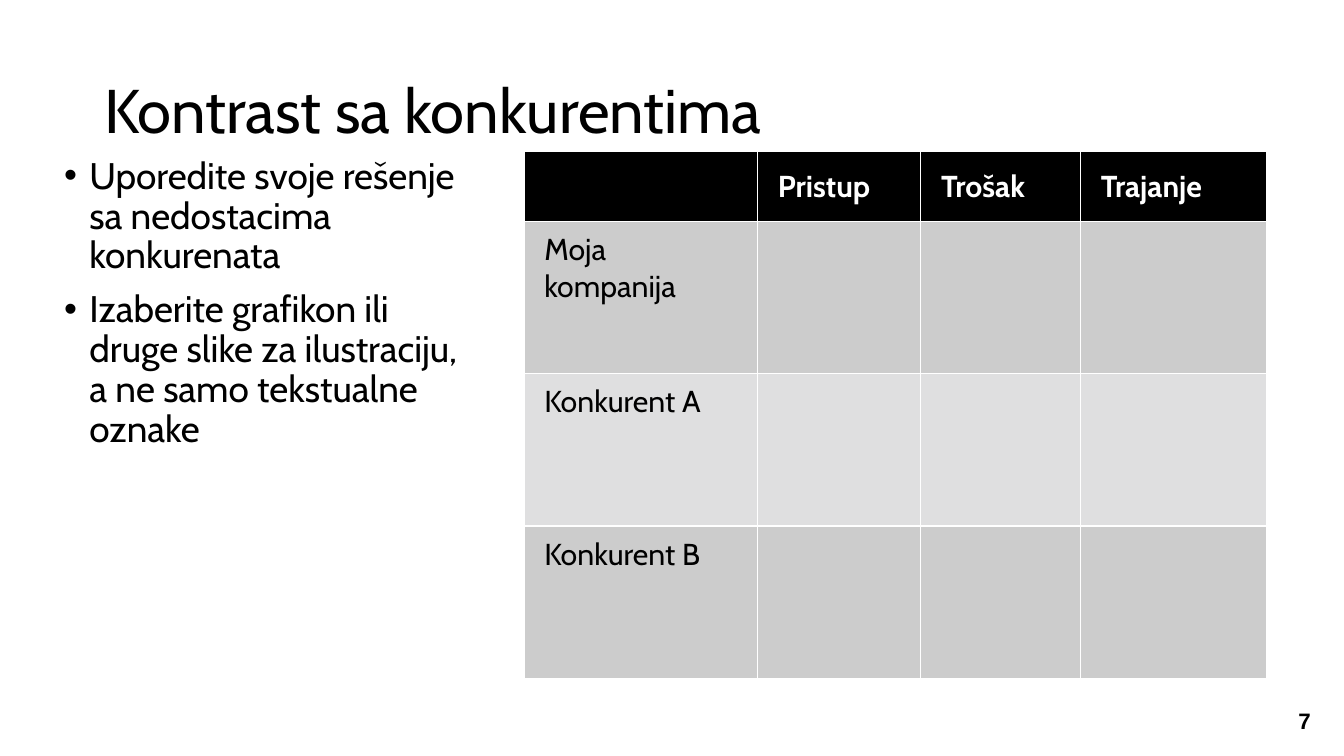
"""Build the slide that contrasts the company with its competitors."""
from lxml import etree
from pptx import Presentation
from pptx import util as u
from pptx.dml.color import RGBColor
from pptx.enum import text
from pptx.oxml import ns

BLACK = RGBColor(0x00, 0x00, 0x00)
WHITE = RGBColor(0xFF, 0xFF, 0xFF)
DARK_BAND = RGBColor(0xCC, 0xCC, 0xCC)
LIGHT_BAND = RGBColor(0xDF, 0xDF, 0xE0)

BULLETS = [
    "Uporedite svoje rešenje sa nedostacima konkurenata",
    "Izaberite grafikon ili druge slike za ilustraciju, a ne samo tekstualne oznake",
]
COMPARISON = [
    ["", "Pristup", "Trošak", "Trajanje"],
    ["Moja kompanija", "", "", ""],
    ["Konkurent A", "", "", ""],
    ["Konkurent B", "", "", ""],
]
COLUMN_WIDTHS = [1.93, 1.35, 1.32, 1.54]
ROW_HEIGHTS = [0.58, 1.26, 1.26, 1.26]


class ContrastSlide:
    """Hold the text style and the current slide."""

    font = "Cabin"

    def __init__(self, deck):
        self.slide = deck.slides.add_slide(deck.slide_layouts[1])

    def style(self, paragraph, size, color=BLACK, bold=False, font=None):
        for run in paragraph.runs:
            run.font.name = font or self.font
            run.font.size = u.Pt(size)
            run.font.bold = bold
            run.font.color.rgb = color

    def place(self, holder, left, top, width, height):
        holder.left, holder.top = u.Inches(left), u.Inches(top)
        holder.width, holder.height = u.Inches(width), u.Inches(height)
        holder.text_frame.auto_size = text.MSO_AUTO_SIZE.NONE
        return holder.text_frame

    def title(self, wording, *box):
        heading = self.place(self.slide.shapes.title, *box)
        heading.text = wording
        heading.vertical_anchor = text.MSO_ANCHOR.MIDDLE
        line = heading.paragraphs[0]
        line.alignment = text.PP_ALIGN.LEFT
        line.line_spacing = 0.9
        self.style(line, 36.7)

    def bullets(self, items, *box):
        advice = self.place(self.slide.placeholders[1], *box)
        advice.text = "\n".join(items)
        for item in advice.paragraphs:
            item.line_spacing = 0.9
            item.space_before = u.Pt(8.3)
            properties = item._p.get_or_add_pPr()
            properties.set("marL", str(u.Inches(0.21)))
            properties.set("indent", str(u.Inches(-0.21)))
            self.style(item, 22)

    def border(self, cell):
        properties = cell._tc.get_or_add_tcPr()
        for position, side in enumerate(("lnL", "lnR", "lnT", "lnB")):
            line = etree.Element(ns.qn(f"a:{side}"), w=str(u.Pt(1)))
            fill = etree.SubElement(line, ns.qn("a:solidFill"))
            etree.SubElement(fill, ns.qn("a:srgbClr"), val=str(WHITE))
            properties.insert(position, line)

    def cell(self, cell, wording, row):
        header = row == 0
        cell.margin_left = cell.margin_right = u.Inches(0.17)
        cell.margin_top = cell.margin_bottom = u.Inches(0.08)
        cell.vertical_anchor = text.MSO_ANCHOR.MIDDLE if header else text.MSO_ANCHOR.TOP
        cell.fill.solid()
        band = DARK_BAND if row % 2 else LIGHT_BAND
        cell.fill.fore_color.rgb = BLACK if header else band
        cell.text_frame.text = wording
        self.style(cell.text_frame.paragraphs[0], 18, WHITE if header else BLACK, header)
        self.border(cell)

    def table(self, rows, left, top):
        size = (sum(COLUMN_WIDTHS), sum(ROW_HEIGHTS))
        comparison = self.slide.shapes.add_table(
            len(rows), len(rows[0]), *map(u.Inches, (left, top, *size))).table
        for column, width in zip(comparison.columns, COLUMN_WIDTHS):
            column.width = u.Inches(width)
        for row, height in zip(comparison.rows, ROW_HEIGHTS):
            row.height = u.Inches(height)
        for r, wordings in enumerate(rows):
            for c, wording in enumerate(wordings):
                self.cell(comparison.cell(r, c), wording, r)

    def page_number(self, number, *box):
        footer = self.slide.shapes.add_textbox(*map(u.Inches, box)).text_frame
        footer.word_wrap = True
        footer.margin_left = footer.margin_right = 0
        footer.margin_top = footer.margin_bottom = 0
        footer.vertical_anchor = text.MSO_ANCHOR.BOTTOM
        footer.text = number
        footer.paragraphs[0].alignment = text.PP_ALIGN.CENTER
        self.style(footer.paragraphs[0], 13.3, bold=True, font="Arial")


def main():
    deck = Presentation()
    deck.slide_width, deck.slide_height = u.Inches(11.11), u.Inches(6.25)
    contrast = ContrastSlide(deck)
    contrast.page_number("7", 10.46, 5.86, 0.65, 0.21)
    contrast.bullets(BULLETS, 0.43, 1.25, 3.56, 3.92)
    contrast.title("Kontrast sa konkurentima", 0.76, 0.33, 9.58, 1.21)
    contrast.table(COMPARISON, 4.33, 1.25)
    deck.save("out.pptx")


if __name__ == "__main__":
    main()
